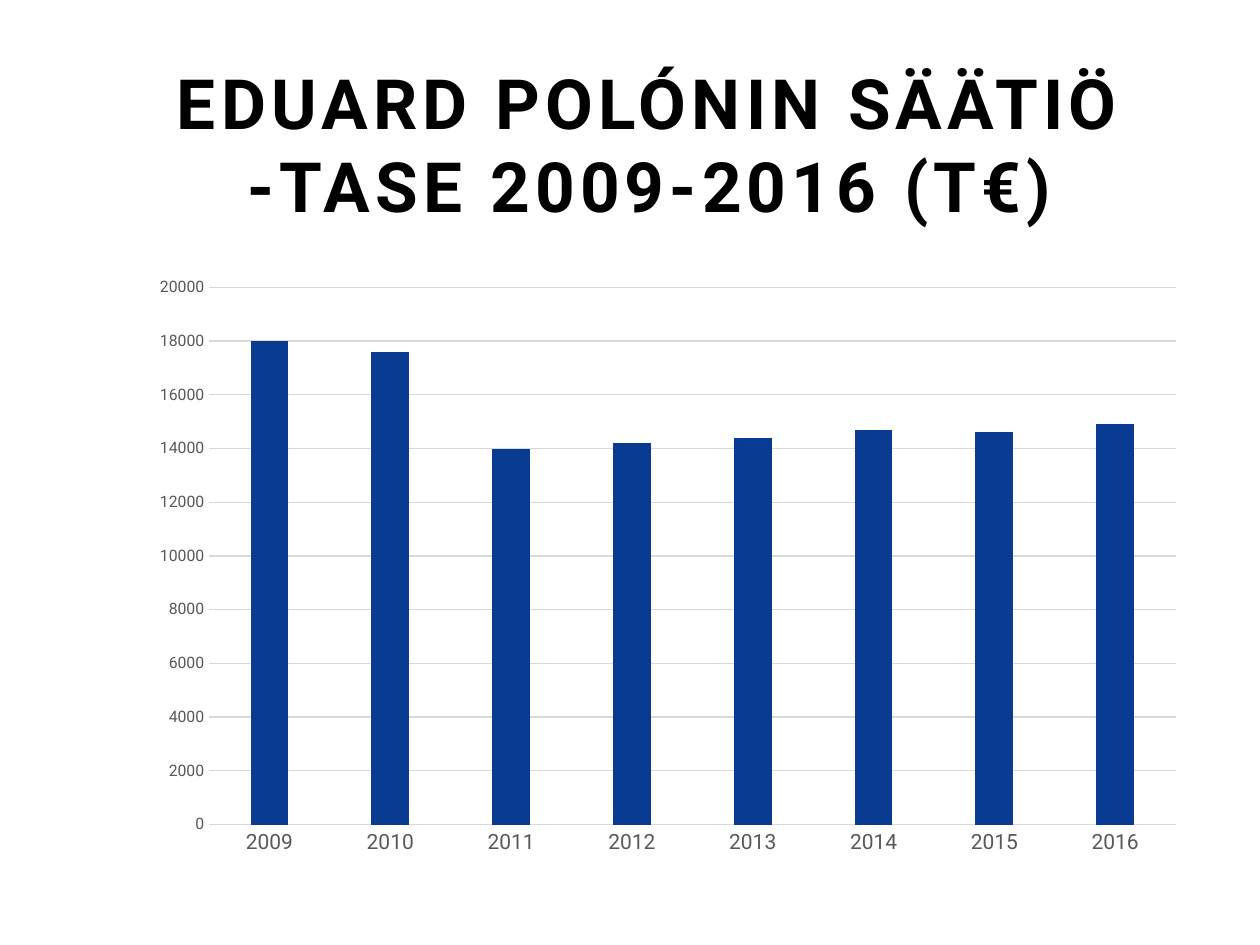
from lxml.etree import SubElement
from pptx import Presentation
from pptx.chart.data import CategoryChartData
from pptx.dml.color import RGBColor
from pptx.enum.chart import XL_CHART_TYPE, XL_TICK_MARK
from pptx.enum.text import MSO_ANCHOR, PP_ALIGN
from pptx.oxml.ns import qn
from pptx.util import Inches, Pt

FONT = "Roboto"
BLACK, GREY, GRID, BLUE = "000000", "595959", "D9D9D9", "0A3B93"
BALANCE = {
    "2009": 18000, "2010": 17600, "2011": 14000, "2012": 14200,
    "2013": 14400, "2014": 14700, "2015": 14600, "2016": 14900,
}


def color(hex_string):
    return RGBColor.from_string(hex_string)


def style_font(font, size, hex_string, bold=False):
    font.name = FONT
    font.size = Pt(size)
    font.bold = bold
    font.color.rgb = color(hex_string)


def style_line(line):
    line.color.rgb = color(GRID)
    line.width = Pt(0.75)


def add_title(page, text):
    box = page.shapes.add_textbox(Inches(1.07), Inches(0.52), Inches(8.18), Inches(1.23))
    frame = box.text_frame
    frame.word_wrap = True
    frame.vertical_anchor = MSO_ANCHOR.MIDDLE
    frame.text = text
    para = frame.paragraphs[0]
    para.alignment = PP_ALIGN.CENTER
    for span in para.runs:
        style_font(span.font, 39.6, BLACK, bold=True)
        span.font._element.set("spc", "300")


def place_plot(chart, **fractions):
    """Fix the inner plot area as fractions of the chart's size."""
    plot_area = chart._chartSpace.chart.plotArea
    layout = plot_area.find(qn("c:layout"))
    if layout is None:
        layout = SubElement(plot_area, qn("c:layout"))
        plot_area.insert(0, layout)
    manual = SubElement(layout, qn("c:manualLayout"))
    settings = {"layoutTarget": "inner", "xMode": "edge", "yMode": "edge", **fractions}
    for name, value in settings.items():
        SubElement(manual, qn(f"c:{name}")).set("val", str(value))


def style_axis(axis, size):
    axis.major_tick_mark = axis.minor_tick_mark = XL_TICK_MARK.NONE
    style_font(axis.tick_labels.font, size, GREY)


def add_balance_chart(page):
    data = CategoryChartData()
    data.categories = list(BALANCE)
    data.add_series("Series 1", list(BALANCE.values()))
    chart = page.shapes.add_chart(
        XL_CHART_TYPE.COLUMN_CLUSTERED,
        Inches(1.07), Inches(2.09), Inches(8.43), Inches(4.79), data,
    ).chart
    chart.has_legend = False
    chart.has_title = False
    style_font(chart.font, 10, BLACK)
    place_plot(chart, x=0.07, y=0.04, w=0.91, h=0.89)

    plot = chart.plots[0]
    plot.vary_by_categories = False
    plot.gap_width = 219
    plot.overlap = -27
    fill = plot.series[0].format.fill
    fill.solid()
    fill.fore_color.rgb = color(BLUE)

    style_axis(chart.category_axis, 12)
    style_line(chart.category_axis.format.line)

    values = chart.value_axis
    style_axis(values, 9)
    values.minimum_scale, values.maximum_scale, values.major_unit = 0, 20000, 2000
    values.tick_labels.number_format = "0"
    values.tick_labels.number_format_is_linked = False
    values.format.line.fill.background()
    values.has_major_gridlines = True
    style_line(values.major_gridlines.format.line)


def main():
    deck = Presentation()
    deck.slide_width, deck.slide_height = Inches(10), Inches(7.5)
    page = deck.slides.add_slide(deck.slide_layouts[6])
    add_title(page, "EDUARD POLÓNIN SÄÄTIÖ\v-TASE 2009-2016 (T€)")
    add_balance_chart(page)
    deck.save("out.pptx")


if __name__ == "__main__":
    main()
